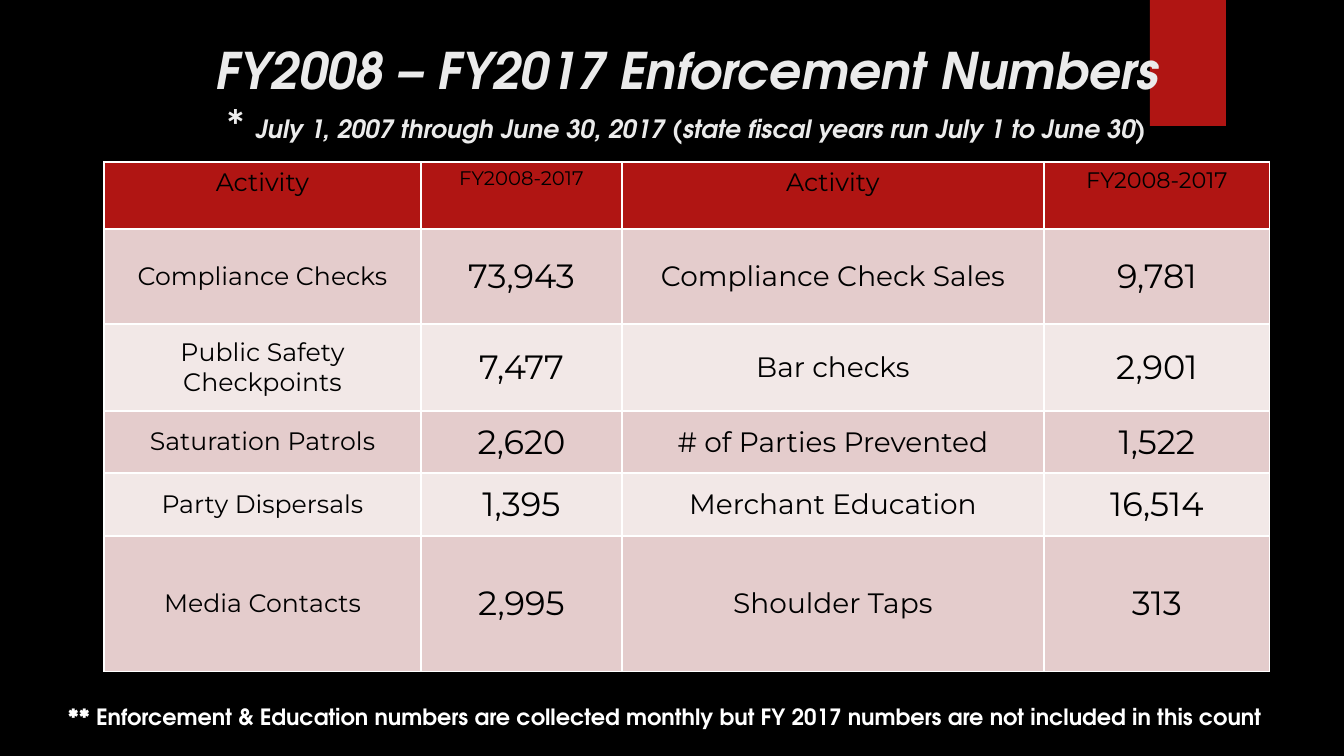
from lxml import etree
from pptx import Presentation
from pptx.dml.color import RGBColor
from pptx.enum import shapes, text
from pptx.oxml.ns import qn
from pptx.util import Emu, Pt

INK = {"back": "000000", "red": "B01513", "title": "EBEBEB",
       "white": "FFFFFF", "dark": "E4CCCC", "light": "F2E8E7"}
HEAD = "TeX Gyre Adventor"
BODY = "Montserrat"
COLS = [317, 201, 422, 226]
ROWS = [67, 95, 87, 62, 63, 136]
SIZES = [18, 24, 20, 24]
TOPS = [18, 14, 18, 16]
DATA = [
    ["Activity", "FY2008-2017", "Activity", "FY2008-2017"],
    ["Compliance Checks", "73,943", "Compliance Check Sales", "9,781"],
    ["Public Safety Checkpoints", "7,477", "Bar checks", "2,901"],
    ["Saturation Patrols", "2,620", "# of Parties Prevented", "1,522"],
    ["Party Dispersals", "1,395", "Merchant Education", "16,514"],
    ["Media Contacts", "2,995", "Shoulder Taps", "313"],
]


def px(num):
    return Emu(round(num * 63500 / 7))


def tint(fill, name):
    fill.solid()
    fill.fore_color.rgb = RGBColor.from_string(INK[name])


def write(para, words, size=18, face=HEAD, ink="white", bold=False, slant=False):
    run = para.add_run()
    run.text = words
    font = run.font
    font.size, font.name = Pt(size), face
    font.bold, font.italic = bold, slant
    font.color.rgb = RGBColor.from_string(INK[ink])


def box(slide, *area, anchor=text.MSO_ANCHOR.TOP, align=text.PP_ALIGN.LEFT):
    frame = slide.shapes.add_textbox(*map(px, area)).text_frame
    frame.word_wrap = True
    frame.vertical_anchor = anchor
    para = frame.paragraphs[0]
    para.alignment = align
    return para


def edge(cell):
    props = cell._tc.get_or_add_tcPr()
    for spot, side in enumerate(("lnL", "lnR", "lnT", "lnB")):
        line = etree.Element(qn("a:" + side), w=str(Pt(1)))
        fill = etree.SubElement(line, qn("a:solidFill"))
        etree.SubElement(fill, qn("a:srgbClr"), val=INK["white"])
        props.insert(spot, line)


def fill_cell(cell, words, size, ink, anchor):
    cell.margin_left = cell.margin_right = px(7)
    cell.margin_top = cell.margin_bottom = px(5)
    cell.vertical_anchor = anchor
    tint(cell.fill, ink)
    edge(cell)
    para = cell.text_frame.paragraphs[0]
    para.alignment = text.PP_ALIGN.CENTER
    write(para, words, size=size, face=BODY, ink="back")


def grid(slide, left, top):
    area = map(px, (left, top, sum(COLS), sum(ROWS)))
    table = slide.shapes.add_table(len(ROWS), len(COLS), *area).table
    table.first_row = table.horz_banding = False
    for col, wide in zip(table.columns, COLS):
        col.width = px(wide)
    for r, (row, high) in enumerate(zip(table.rows, ROWS)):
        row.height = px(high)
        ink = ("light", "dark")[r % 2] if r else "red"
        anchor = text.MSO_ANCHOR.MIDDLE if r else text.MSO_ANCHOR.TOP
        for cell, words, size in zip(row.cells, DATA[r], SIZES if r else TOPS):
            fill_cell(cell, words, size, ink, anchor)


def flag(slide, *area):
    shape = slide.shapes.add_shape(shapes.MSO_SHAPE.RECTANGLE, *map(px, area))
    shape.shadow.inherit = False
    tint(shape.fill, "red")
    shape.line.fill.background()


def main():
    deck = Presentation()
    deck.slide_width, deck.slide_height = px(1344), px(756)
    slide = deck.slides.add_slide(deck.slide_layouts[6])
    tint(slide.background.fill, "back")
    flag(slide, 1150, 0, 76, 126)

    title = box(slide, 104, 30, 1166, 126, anchor=text.MSO_ANCHOR.MIDDLE,
                align=text.PP_ALIGN.CENTER)
    write(title, "FY2008 – FY2017 Enforcement Numbers", size=36,
          ink="title", bold=True, slant=True)
    title.add_line_break()
    write(title, "* ", size=28, ink="title", slant=True)
    write(title, "July 1, 2007 through June 30, 2017 "
          "(state fiscal years run July 1 to June 30)",
          ink="title", bold=True, slant=True)

    grid(slide, 104, 162)
    note = box(slide, 58, 698, 1258, 37)
    write(note, "** Enforcement & Education numbers are collected monthly "
          "but FY 2017 numbers are not included in this count",
          size=16, bold=True)
    deck.save("out.pptx")


if __name__ == "__main__":
    main()
